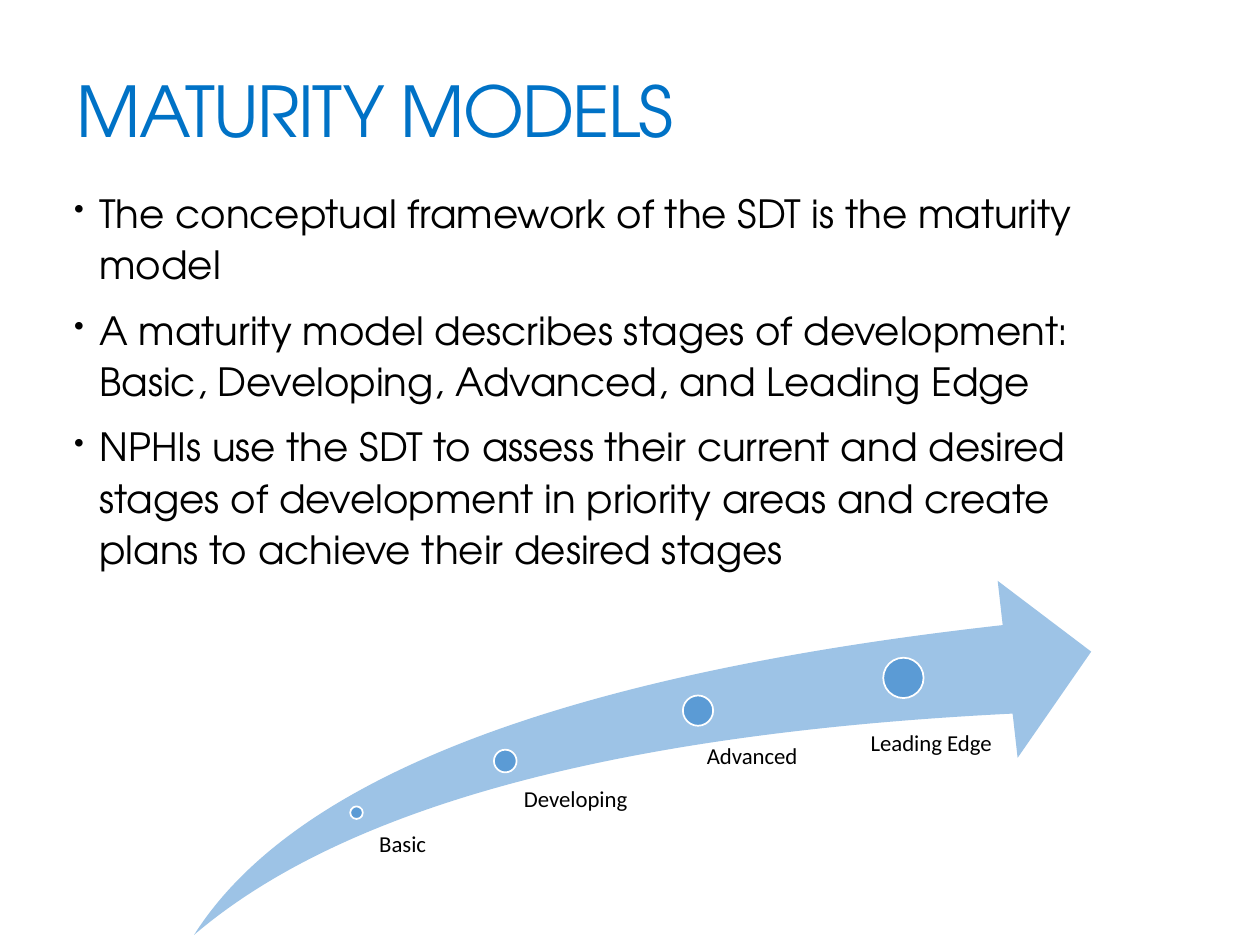
from dataclasses import dataclass

from lxml.etree import SubElement
from pptx import Presentation
from pptx.dml.color import RGBColor
from pptx.enum.shapes import MSO_SHAPE as Shape
from pptx.enum.text import MSO_ANCHOR as Anchor, PP_ALIGN as Align
from pptx.oxml.ns import qn
from pptx.util import Inches, Pt

COLS, ROWS = 100, 75


@dataclass(frozen=True)
class Theme:
    title_color: str = "0072C6"
    text_color: str = "000000"
    arrow_color: str = "9DC3E6"
    dot_color: str = "5B9BD5"
    dot_line: str = "FFFFFF"
    heading_font: str = "TeX Gyre Adventor"
    label_font: str = "Calibri"
    title_size: float = 40
    body_size: float = 22.2
    label_size: float = 13


@dataclass(frozen=True)
class Box:
    col: float
    row: float
    cols: float
    rows: float


@dataclass(frozen=True)
class Stage:
    name: str
    center: tuple[float, float]
    diameter: float
    label: Box
    inset: float


THEME = Theme()
TITLE_BOX = Box(5.1, 3.3, 90, 10.8)
BODY_BOX = Box(4.9, 14.2, 85.1, 32)
ARROW_BOX = Box(15.4, 46.1, 71.2, 28.1)
POINTS = (
    "The conceptual framework of the SDT is the maturity model",
    "A maturity model describes stages of development: "
    "Basic, Developing, Advanced, and Leading Edge",
    "NPHIs use the SDT to assess their current and desired stages of development "
    "in priority areas and create plans to achieve their desired stages",
)
STAGES = (
    Stage("Basic", (28.3, 64.5), 1, Box(29.6, 66.1, 7.7, 6.7), 0.5),
    Stage("Developing", (40.1, 60.4), 1.8, Box(40.6, 62.5, 9.4, 3.7), 1),
    Stage("Advanced", (55.4, 56.4), 2.4, Box(54.8, 59.1, 8.8, 3.9), 1.3),
    Stage("Leading Edge", (71.7, 53.8), 3.2, Box(67.4, 58.1, 13.4, 2.5), 1.7),
)

prs = Presentation()
prs.slide_width, prs.slide_height = Inches(10), Inches(7.5)


def across(cols: float) -> int:
    return round(prs.slide_width * cols / COLS)


def down(rows: float) -> int:
    return round(prs.slide_height * rows / ROWS)


def place(box: Box) -> tuple[int, int, int, int]:
    return across(box.col), down(box.row), across(box.cols), down(box.rows)


def style(p, font: str, size: float, color: str) -> None:
    p.alignment = Align.LEFT
    for r in p.runs:
        r.font.name, r.font.size = font, Pt(size)
        r.font.color.rgb = RGBColor.from_string(color)


def add_filled(s, kind: Shape, box: Box, color: str):
    sp = s.shapes.add_shape(kind, *place(box))
    sp.shadow.inherit = False
    sp.fill.solid()
    sp.fill.fore_color.rgb = RGBColor.from_string(color)
    sp.line.fill.background()
    return sp


def add_text(s, box: Box):
    tf = s.shapes.add_textbox(*place(box)).text_frame
    tf.word_wrap = True
    return tf


def add_title(s, text: str) -> None:
    sp = s.shapes.title
    sp.left, sp.top, sp.width, sp.height = place(TITLE_BOX)
    tf = sp.text_frame
    tf.text = text
    tf.vertical_anchor = Anchor.MIDDLE
    p = tf.paragraphs[0]
    style(p, THEME.heading_font, THEME.title_size, THEME.title_color)
    p.runs[0].font._element.set("spc", "-100")


def add_points(s, points: tuple[str, ...]) -> None:
    tf = add_text(s, BODY_BOX)
    tf.text = "\n".join(points)
    for i, p in enumerate(tf.paragraphs):
        pPr = p._p.get_or_add_pPr()
        pPr.set("marL", str(across(2)))
        pPr.set("indent", str(-across(2)))
        SubElement(pPr, qn("a:buSzPct"), val="75000")
        SubElement(pPr, qn("a:buChar"), char="•")
        p.line_spacing = 1.1
        p.space_before = Pt(6 if i else 0)
        p.space_after = Pt(2)
        style(p, THEME.heading_font, THEME.body_size, THEME.text_color)


def add_stage(s, stage: Stage) -> None:
    x, y = stage.center
    d = stage.diameter
    dot = add_filled(s, Shape.OVAL, Box(x - d / 2, y - d / 2, d, d), THEME.dot_color)
    dot.line.color.rgb = RGBColor.from_string(THEME.dot_line)
    dot.line.width = Pt(1)
    tf = add_text(s, stage.label)
    tf.margin_left = across(stage.inset)
    tf.margin_top = tf.margin_right = tf.margin_bottom = 0
    tf.text = stage.name
    p = tf.paragraphs[0]
    p.line_spacing = 0.9
    style(p, THEME.label_font, THEME.label_size, THEME.text_color)


def main() -> None:
    s = prs.slides.add_slide(prs.slide_layouts[5])
    arrow = add_filled(s, Shape.SWOOSH_ARROW, ARROW_BOX, THEME.arrow_color)
    arrow.adjustments[0] = arrow.adjustments[1] = 0.25
    for stage in STAGES:
        add_stage(s, stage)
    add_points(s, POINTS)
    add_title(s, "MATURITY MODELS")
    prs.save("out.pptx")


if __name__ == "__main__":
    main()
